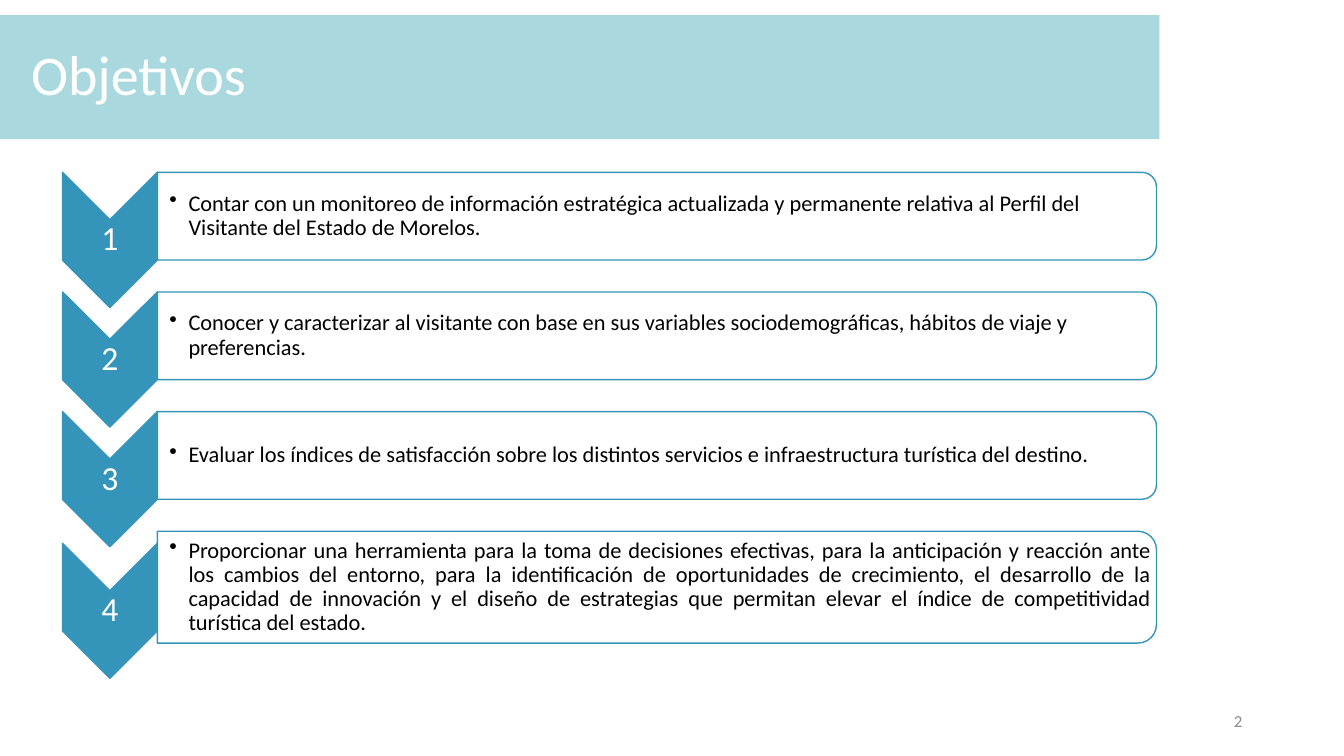
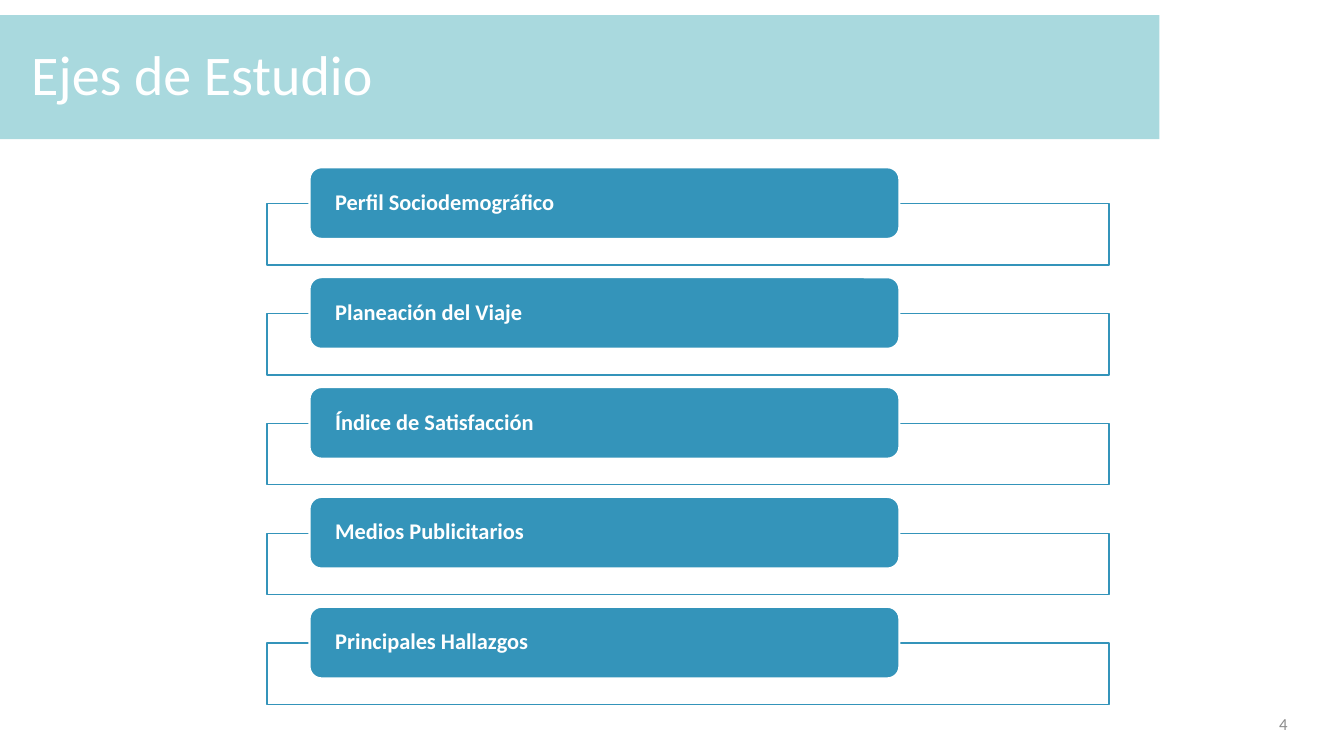
from typing import Any, NamedTuple

from lxml import etree
from pptx import Presentation
from pptx import util as u
from pptx.dml.color import RGBColor
from pptx.enum import shapes, text
from pptx.oxml import ns

COLORS = {
    "band": "9BD3D9",
    "accent": "3494BA",
    "white": "FFFFFF",
    "black": "000000",
    "muted": "8C8C8C",
}
FONT = "Calibri"
LEFT, CENTER = text.PP_ALIGN.LEFT, text.PP_ALIGN.CENTER
RIGHT, JUSTIFY = text.PP_ALIGN.RIGHT, text.PP_ALIGN.JUSTIFY
SHAPE = shapes.MSO_SHAPE


class Box(NamedTuple):
    left: float
    top: float
    width: float
    height: float

    def lengths(self) -> list[u.Length]:
        return [u.Inches(value) for value in self]

    def quarter_turned(self) -> "Box":
        """Frame that covers this box once it is rotated by 90 degrees."""
        shift = (self.width - self.height) / 2
        return Box(self.left + shift, self.top - shift, self.height, self.width)


class TextStyle(NamedTuple):
    size: float
    color: str
    bold: bool = False
    align: Any = LEFT
    spacing: float = 0.9
    insets: tuple[float, float, float, float] = (0.1, 0.05, 0.1, 0.05)
    bullet_indent: float = 0


class Objective(NamedTuple):
    statement: str
    height: float = 0.87
    align: Any = LEFT


TITLE = TextStyle(40, "white")
PAGE_NUMBER = TextStyle(12, "muted", align=RIGHT, spacing=1.0)
STEP_NUMBER = TextStyle(24, "white", align=CENTER, insets=(0.02,) * 4)
STATEMENT = TextStyle(16, "black", insets=(0.12, 0.01, 0.01, 0.01), bullet_indent=0.19)
AXIS_LABEL = TextStyle(16, "white", bold=True, insets=(0.22, 0, 0.22, 0))

OBJECTIVES = [
    Objective("Contar con un monitoreo de información estratégica actualizada y permanente "
              "relativa al Perfil del Visitante del Estado de Morelos."),
    Objective("Conocer y caracterizar al visitante con base en sus variables "
              "sociodemográficas, hábitos de viaje y preferencias."),
    Objective("Evaluar los índices de satisfacción sobre los distintos servicios e "
              "infraestructura turística del destino."),
    Objective("Proporcionar una herramienta para la toma de decisiones efectivas, para la "
              "anticipación y reacción ante los cambios del entorno, para la identificación "
              "de oportunidades de crecimiento, el desarrollo de la capacidad de innovación "
              "y el diseño de estrategias que permitan elevar el índice de competitividad "
              "turística del estado.", 1.11, JUSTIFY),
]
STUDY_AXES = [
    "Perfil Sociodemográfico",
    "Planeación del Viaje",
    "Índice de Satisfacción",
    "Medios Publicitarios",
    "Principales Hallazgos",
]


def rgb(name: str) -> RGBColor:
    return RGBColor.from_string(COLORS[name])


def apply(target: Any, values: dict[str, Any]) -> None:
    for name, value in values.items():
        setattr(target, name, value)


# Text and shape helpers
def write(shape: Any, wording: str, style: TextStyle) -> None:
    frame = shape.text_frame
    sides = ("margin_left", "margin_top", "margin_right", "margin_bottom")
    apply(frame, dict(zip(sides, map(u.Inches, style.insets))))
    apply(frame, {"word_wrap": True, "vertical_anchor": text.MSO_ANCHOR.MIDDLE})
    paragraph = frame.paragraphs[0]
    apply(paragraph, {"alignment": style.align, "line_spacing": style.spacing})
    if style.bullet_indent:
        properties = paragraph._p.get_or_add_pPr()
        indent = u.Inches(style.bullet_indent)
        properties.set("marL", str(indent))
        properties.set("indent", str(-indent))
        etree.SubElement(properties, ns.qn("a:buChar")).set("char", "•")
    run = paragraph.add_run()
    run.text = wording
    apply(run.font, {"name": FONT, "size": u.Pt(style.size), "bold": style.bold})
    run.font.color.rgb = rgb(style.color)


def add_text(slide: Any, box: Box, wording: str, style: TextStyle) -> None:
    write(slide.shapes.add_textbox(*box.lengths()), wording, style)


def add_figure(slide: Any, kind: Any, box: Box, fill: str, line: str | None = None,
               line_width: float = 1, opacity: int = 100, rotation: int = 0) -> Any:
    figure = slide.shapes.add_shape(kind, *box.lengths())
    figure.rotation = rotation
    figure.shadow.inherit = False
    figure.fill.solid()
    figure.fill.fore_color.rgb = rgb(fill)
    if opacity < 100:
        color = figure._element.spPr.find(".//" + ns.qn("a:srgbClr"))
        etree.SubElement(color, ns.qn("a:alpha")).set("val", str(opacity * 1000))
    if line:
        figure.line.color.rgb = rgb(line)
        figure.line.width = u.Pt(line_width)
    else:
        figure.line.fill.background()
    return figure


def add_titled_slide(deck: Any, title: str, page: str, page_box: Box) -> Any:
    slide = deck.slides.add_slide(deck.slide_layouts[6])
    add_figure(slide, SHAPE.RECTANGLE, Box(0, 0.15, 11.5, 1.23), "band", opacity=85)
    add_text(slide, Box(0.21, 0.41, 10.3, 0.71), title, TITLE)
    add_text(slide, page_box, page, PAGE_NUMBER)
    return slide


# Numbered chevrons, each with a panel to its right
def draw_objectives(slide: Any) -> None:
    first_top, last_top = 1.71, 5.27
    pitch = (last_top - first_top) / (len(OBJECTIVES) - 1)
    for index, objective in enumerate(OBJECTIVES):
        top = first_top + index * pitch
        chevron_top = top + (objective.height - 0.87) / 2
        chevron = Box(0.62, chevron_top, 0.94, 1.34)
        panel = Box(1.56, top, 9.91, objective.height)
        add_figure(slide, SHAPE.CHEVRON, chevron.quarter_turned(), "accent", "accent",
                   rotation=90)
        add_text(slide, Box(0.62, chevron_top + 0.47, 0.94, 0.4), str(index + 1), STEP_NUMBER)
        add_figure(slide, SHAPE.ROUND_2_SAME_RECTANGLE, panel.quarter_turned(), "white",
                   "accent", opacity=90, rotation=90)
        add_text(slide, panel._replace(width=9.87), objective.statement,
                 STATEMENT._replace(align=objective.align))


# Labels overlapping the top edge of outlined frames
def draw_study_axes(slide: Any) -> None:
    for index, axis in enumerate(STUDY_AXES):
        top = 1.66 + index * 1.09
        add_figure(slide, SHAPE.RECTANGLE, Box(2.65, top + 0.36, 8.35, 0.61), "white",
                   "accent", opacity=90)
        label = add_figure(slide, SHAPE.ROUNDED_RECTANGLE, Box(3.07, top, 5.85, 0.71),
                           "accent", "white", line_width=1.5)
        write(label, axis, AXIS_LABEL)


def main() -> None:
    deck = Presentation()
    apply(deck, {"slide_width": u.Inches(13.33), "slide_height": u.Inches(7.5)})
    draw_objectives(add_titled_slide(deck, "Objetivos", "2", Box(9.42, 6.95, 3, 0.4)))
    draw_study_axes(add_titled_slide(deck, "Ejes de Estudio", "4", Box(12.42, 6.98, 0.45, 0.4)))
    deck.save("out.pptx")


if __name__ == "__main__":
    main()
